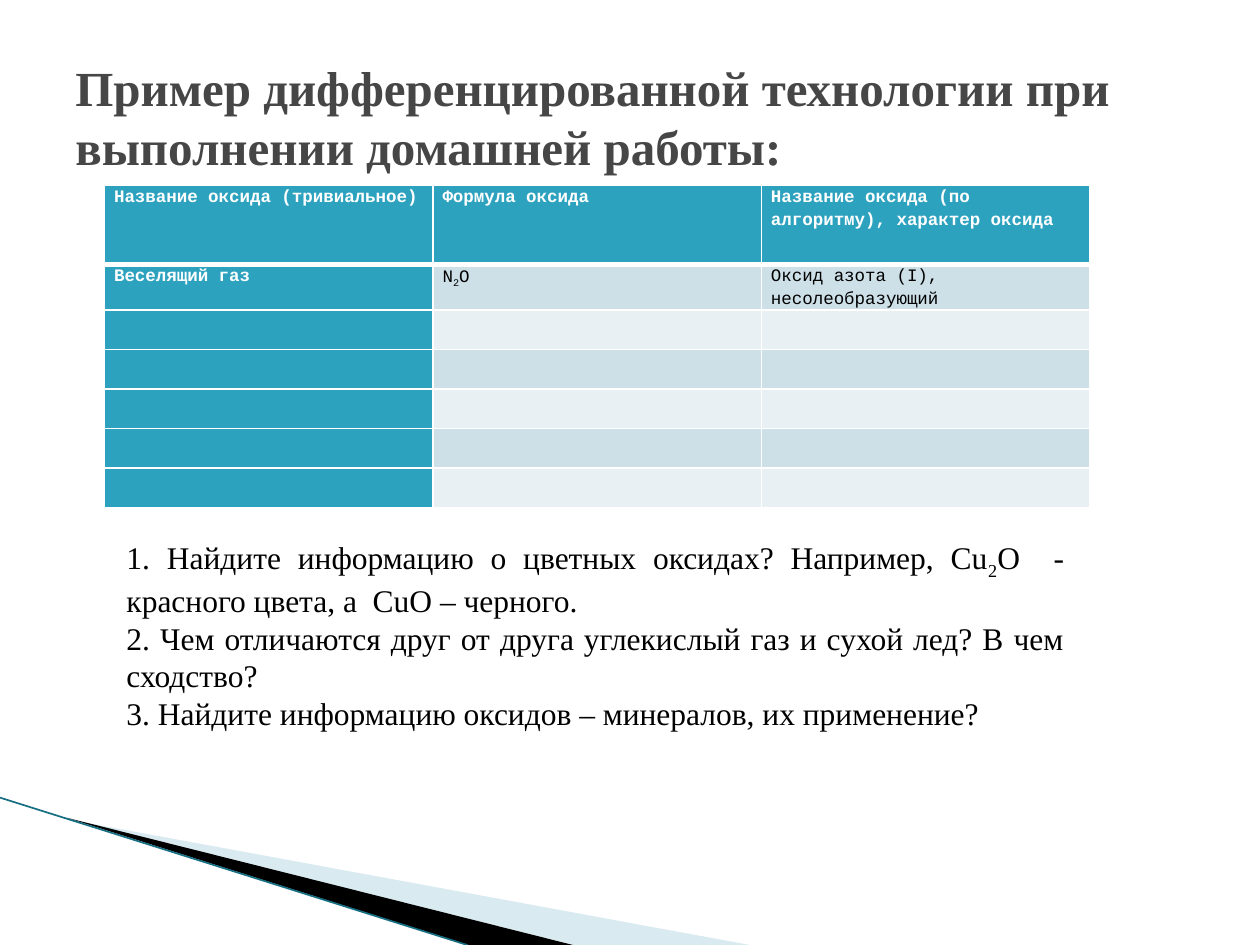
from dataclasses import dataclass

from lxml import etree
from pptx import Presentation
from pptx.dml.color import RGBColor
from pptx.enum.text import MSO_ANCHOR as Anchor, PP_ALIGN as Align
from pptx.oxml.ns import qn
from pptx.util import Pt

WHITE = RGBColor(0xFF, 0xFF, 0xFF)
BLACK = RGBColor(0, 0, 0)
GREY = RGBColor(0x46, 0x46, 0x46)
TEAL = RGBColor(0x2D, 0xA2, 0xBF)
DARK_TEAL = RGBColor(0x16, 0x6E, 0x82)
PALE_BLUE = RGBColor(0xA0, 0xCB, 0xDC)
BANDS = RGBColor(0xCD, 0xE0, 0xE8), RGBColor(0xE8, 0xF0, 0xF4)

SERIF, MONO = "Times New Roman", "Courier New"
COL_WIDTH, HEADER_HEIGHT, ROW_HEIGHT = 187.7, 45.3, 22.6


@dataclass
class Style:
    font: str
    size: float
    color: RGBColor
    bold: bool = False


@dataclass
class Wedge:
    points: list[tuple[float, float]]
    color: RGBColor
    opacity: int = 100


WEDGES = [
    Wedge([(39.6, 468.4), (428.4, 540), (328.3, 540)], PALE_BLUE, 40),
    Wedge([(38.2, 467.3), (327.5, 540), (267.8, 540)], BLACK),
]

# A part between underscores is a subscript
TITLE = "Пример дифференцированной технологии при выполнении домашней работы:"
ROWS = [
    ["Название оксида (тривиальное)", "Формула оксида",
     "Название оксида (по алгоритму), характер оксида"],
    ["Веселящий газ", "N_2_O", "Оксид азота (I), несолеобразующий"],
] + [[""] * 3] * 5
TASKS = [
    "1. Найдите информацию о цветных оксидах? Например, Cu_2_O  - красного цвета, а  CuO – черного.",
    "2. Чем отличаются друг от друга углекислый газ и сухой лед? В чем сходство?",
    "3. Найдите информацию оксидов – минералов, их применение?",
]


def write(p, text: str, style: Style) -> None:
    for i, part in enumerate(text.split("_")):
        r = p.add_run()
        r.text = part
        if i % 2:
            r._r.get_or_add_rPr().set("baseline", "-25000")
    p.font.name, p.font.size = style.font, Pt(style.size)
    p.font.bold, p.font.color.rgb = style.bold, style.color


def add_text(s, box: tuple, lines: list[str], style: Style, align, anchor) -> None:
    tf = s.shapes.add_textbox(*map(Pt, box)).text_frame
    tf.word_wrap, tf.vertical_anchor = True, anchor
    for i, line in enumerate(lines):
        p = tf.add_paragraph() if i else tf.paragraphs[0]
        p.alignment = align
        write(p, line, style)


def add_wedge(s, wedge: Wedge) -> None:
    first, *rest = [(Pt(x), Pt(y)) for x, y in wedge.points]
    builder = s.shapes.build_freeform(*first)
    builder.add_line_segments(rest)
    sp = builder.convert_to_shape()
    sp.shadow.inherit = False
    sp.fill.solid()
    sp.fill.fore_color.rgb = wedge.color
    sp.line.fill.background()
    if wedge.opacity < 100:
        color = sp._element.spPr.find(".//" + qn("a:srgbClr"))
        etree.SubElement(color, qn("a:alpha"), val=str(wedge.opacity * 1000))


def set_borders(cell, widths: dict[str, float]) -> None:
    tc_pr = cell._tc.get_or_add_tcPr()
    for i, (side, width) in enumerate(widths.items()):
        ln = etree.Element(qn(f"a:ln{side}"), w=str(Pt(width)))
        fill = etree.SubElement(ln, qn("a:solidFill"))
        etree.SubElement(fill, qn("a:srgbClr"), val=str(WHITE))
        tc_pr.insert(i, ln)


def add_oxide_table(s) -> None:
    height = HEADER_HEIGHT + ROW_HEIGHT * (len(ROWS) - 1)
    table = s.shapes.add_table(len(ROWS), 3, Pt(59.8), Pt(105.8),
                               Pt(COL_WIDTH * 3), Pt(height)).table
    for col in table.columns:
        col.width = Pt(COL_WIDTH)
    for i, row in enumerate(ROWS):
        table.rows[i].height = Pt(ROW_HEIGHT if i else HEADER_HEIGHT)
        for j, text in enumerate(row):
            cell = table.cell(i, j)
            heading = i == 0 or j == 0
            cell.margin_left = cell.margin_right = Pt(5.4)
            cell.margin_top = cell.margin_bottom = 0
            cell.fill.solid()
            cell.fill.fore_color.rgb = TEAL if heading else BANDS[(i - 1) % 2]
            set_borders(cell, {"L": 1, "R": 1, "T": 3 if i == 1 else 1,
                               "B": 1 if i else 3})
            if text:
                p = cell.text_frame.paragraphs[0]
                p.line_spacing, p.space_after = 1.15, Pt(10)
                write(p, text, Style(MONO, 10, WHITE if heading else BLACK, heading))


def main() -> None:
    prs = Presentation()
    prs.slide_width, prs.slide_height = Pt(720), Pt(540)
    s = prs.slides.add_slide(prs.slide_layouts[6])

    # Corner decoration
    for wedge in WEDGES:
        add_wedge(s, wedge)
    edge = s.shapes.add_connector(1, Pt(0), Pt(455.8), Pt(267), Pt(540))
    edge.line.color.rgb, edge.line.width = DARK_TEAL, Pt(0.95)
    etree.SubElement(edge._element.spPr, qn("a:effectLst"))

    # Table, title and tasks
    add_oxide_table(s)
    add_text(s, (36, 21.6, 648, 90), [TITLE], Style(SERIF, 28, GREY, True),
             Align.LEFT, Anchor.MIDDLE)
    add_text(s, (65.2, 303.8, 550, 116.6), TASKS, Style(SERIF, 18, BLACK),
             Align.JUSTIFY, Anchor.TOP)

    prs.save("out.pptx")


if __name__ == "__main__":
    main()
